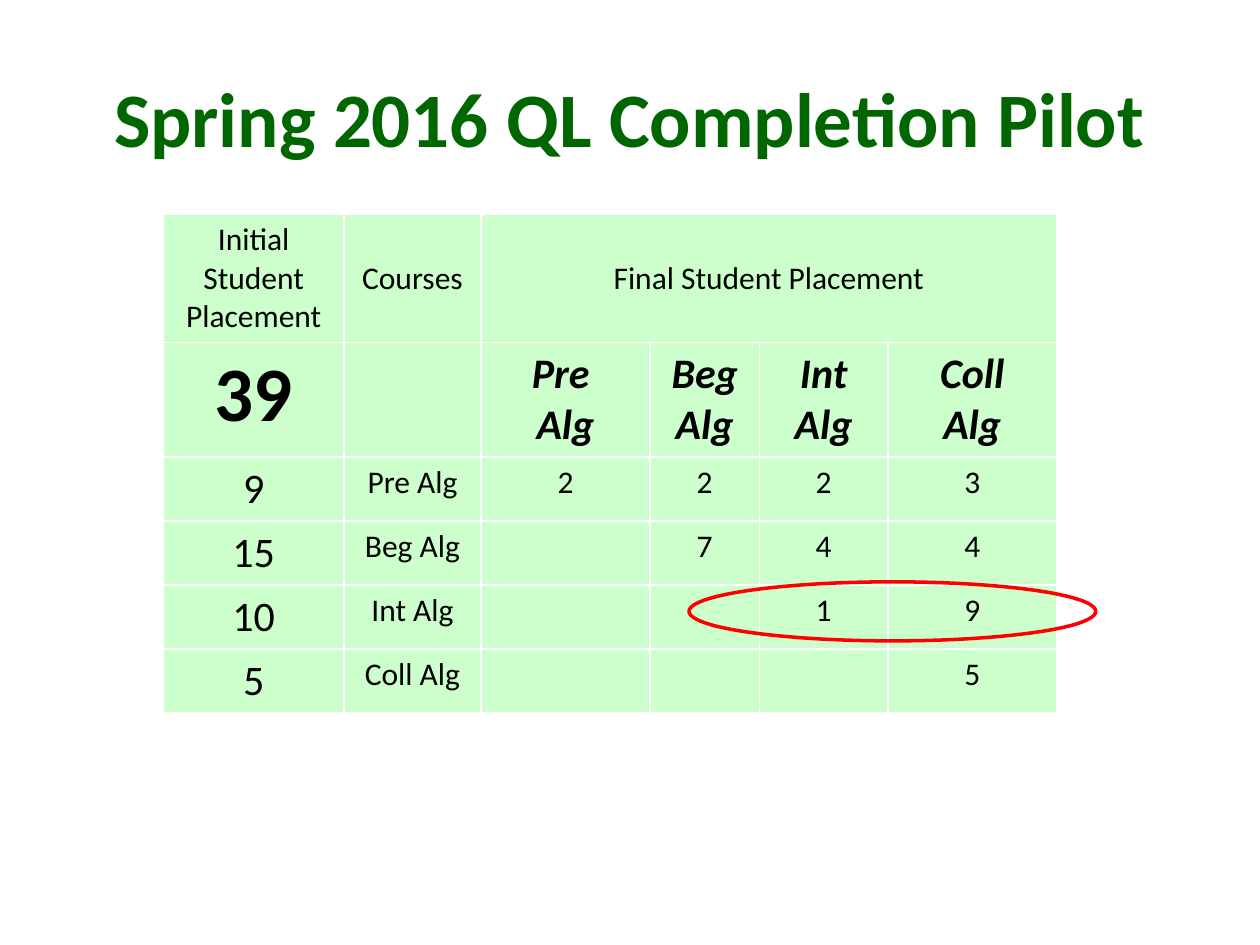
from lxml.etree import SubElement
from pptx import Presentation
from pptx.dml.color import RGBColor
from pptx.enum.shapes import MSO_SHAPE as Shape
from pptx.enum.text import MSO_ANCHOR as Anchor, PP_ALIGN as Align
from pptx.oxml.ns import qn
from pptx.util import Cm, Pt

DARK_GREEN = RGBColor(0x00, 0x66, 0x00)
PALE_GREEN = RGBColor(0xCC, 0xFF, 0xCC)
BLACK = RGBColor(0, 0, 0)
WHITE = RGBColor(0xFF, 0xFF, 0xFF)
RED = RGBColor(0xFF, 0, 0)

TITLE = {"size": Pt(44), "bold": True, "color": DARK_GREEN}
BODY = {"size": Pt(18), "bold": False}
COUNT = {"size": Pt(24), "bold": False}
TOTAL = {"size": Pt(44), "bold": True}
COURSE = {"size": Pt(24), "bold": True, "italic": True}

COLUMN_WIDTHS = [3.63, 2.77, 3.4, 2.21, 2.59, 3.4]
ROW_HEIGHTS = [2.58, 2.31] + [1.29] * 4
PLACEMENTS = [
    ["Initial Student Placement", "Courses", "Final Student Placement", "", "", ""],
    ["39", "", "Pre \nAlg", "Beg Alg", "Int Alg", "Coll\nAlg"],
    ["9", "Pre Alg", "2", "2", "2", "3"],
    ["15", "Beg Alg", "", "7", "4", "4"],
    ["10", "Int Alg", "", "", "1", "9"],
    ["5", "Coll Alg", "", "", "", "5"],
]


def write_text(text_frame, text, font_format):
    text_frame.text = text
    for paragraph in text_frame.paragraphs:
        paragraph.alignment = Align.CENTER
        values = {"name": "Calibri", "color": BLACK, **font_format}
        paragraph.font.color.rgb = values.pop("color")
        for run in paragraph.runs:
            run.font.color.rgb = paragraph.font.color.rgb
        for font in [paragraph.font] + [run.font for run in paragraph.runs]:
            for name, value in values.items():
                setattr(font, name, value)


def add_title(slide, text):
    box = slide.shapes.add_textbox(Cm(1.27), Cm(0.76), Cm(22.86), Cm(3.18))
    box.text_frame.word_wrap = True
    box.text_frame.vertical_anchor = Anchor.MIDDLE
    write_text(box.text_frame, text, TITLE)


def set_borders(cell, color, width):
    properties = cell._tc.get_or_add_tcPr()
    for side in ("lnL", "lnR", "lnT", "lnB"):
        line = SubElement(properties, qn(f"a:{side}"), w=str(width))
        fill = SubElement(line, qn("a:solidFill"))
        SubElement(fill, qn("a:srgbClr"), val=str(color))


def cell_format(row, column):
    if row == 0:
        return BODY
    if row == 1:
        return TOTAL if column == 0 else COURSE
    return COUNT if column == 0 else BODY


def add_placement_table(slide):
    frame = slide.shapes.add_table(
        len(ROW_HEIGHTS), len(COLUMN_WIDTHS), Cm(3.3), Cm(4.32),
        Cm(sum(COLUMN_WIDTHS)), Cm(sum(ROW_HEIGHTS)))
    table = frame.table
    for column, width in zip(table.columns, COLUMN_WIDTHS):
        column.width = Cm(width)
    for row, height in zip(table.rows, ROW_HEIGHTS):
        row.height = Cm(height)
    for row, texts in enumerate(PLACEMENTS):
        for column, text in enumerate(texts):
            cell = table.cell(row, column)
            write_text(cell.text_frame, text, cell_format(row, column))
            set_borders(cell, WHITE, Pt(1))
            cell.fill.solid()
            cell.fill.fore_color.rgb = PALE_GREEN
            if row == 0 and column > 0:
                cell.vertical_anchor = Anchor.MIDDLE
    table.cell(0, 2).merge(table.cell(0, 5))


def add_highlight(slide):
    ellipse = slide.shapes.add_shape(
        Shape.OVAL, Cm(13.89), Cm(11.73), Cm(8.2), Cm(1.19))
    ellipse.shadow.inherit = False
    ellipse.fill.background()
    ellipse.line.color.rgb = RED
    ellipse.line.width = Pt(2)


def main():
    presentation = Presentation()
    presentation.slide_width = Cm(25.4)
    presentation.slide_height = Cm(19.05)
    slide = presentation.slides.add_slide(presentation.slide_layouts[6])
    add_title(slide, "Spring 2016 QL Completion Pilot")
    add_placement_table(slide)
    add_highlight(slide)
    presentation.save("out.pptx")


if __name__ == "__main__":
    main()
